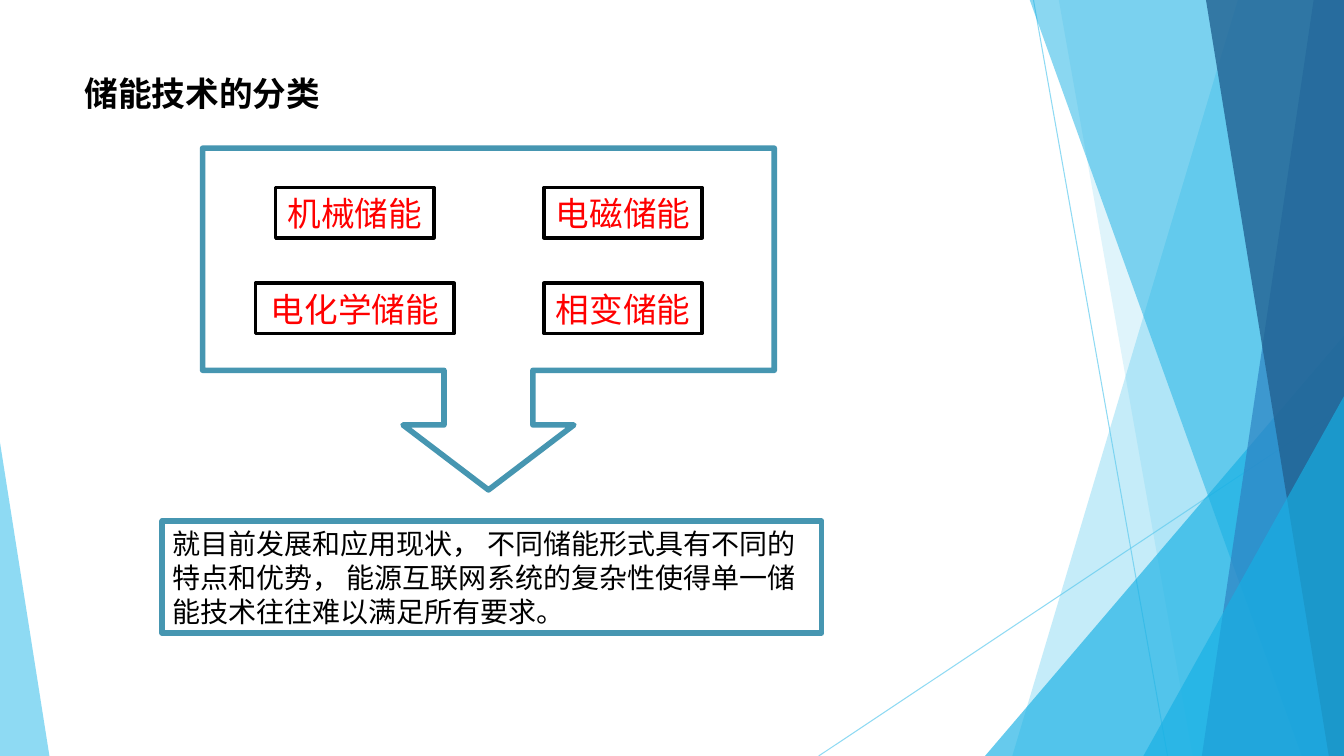
import pptx
import pptx.util
import pptx.dml.color
import pptx.enum.shapes
import pptx.enum.text
import pptx.oxml.ns
import lxml.etree

Inches = pptx.util.Inches
SHAPES = pptx.enum.shapes.MSO_SHAPE
ALIGN = pptx.enum.text.PP_ALIGN
ANCHOR = pptx.enum.text.MSO_ANCHOR

WIDTH, HEIGHT = 13.33, 7.5
FONT = "Noto Sans CJK SC"
COLORS = {"sky": "5FCBEF", "cyan": "17B0E4", "blue": "2E83C3", "navy": "226292",
          "teal": "4696B1", "black": "000000", "red": "FF0000"}

HEADING = "储能技术的分类"
CATEGORIES = [["机械储能", "电磁储能"], ["电化学储能", "相变储能"]]
CONCLUSION = ("就目前发展和应用现状， 不同储能形式具有不同的特点和优势， "
              "能源互联网系统的复杂性使得单一储能技术往往难以满足所有要求。")

RAYS = [((10.25, 0), (11.58, HEIGHT)), ((WIDTH, 4.03), (8.12, HEIGHT))]
FACETS = [
    ("band", 12.28, 10.04, "sky", 36),
    ("band", 10.5, 11.83, "sky", 20),
    ("wedge", (9.77, 3.33, 3.56, 4.17), 1, "cyan", 66),
    ("band", 10.21, 12.91, "cyan", 50),
    ("band", 13.03, 11.92, "blue", 70),
    ("band", 11.96, 13.18, "navy", 80),
    ("wedge", (11.34, 3.93, 1.99, 3.57), 1, "cyan", 66),
    ("wedge", (0, 4.39, 0.49, 3.11), 0, "sky", 70),
]

HEADING_BOX = (0.74, 0.67, 4.09, 0.5)
CONCLUSION_BOX = (1.61, 5.17, 6.54, 1.11)
CALLOUT_BOX = (2.01, 1.47, 5.67, 3.39)
CALLOUT_RATIOS = (0.26, 0.25, 0.19, 0.65)
COLUMN_CENTERS = (3.52, 6.18)
FIRST_ROW, ROW_STEP, LABEL_HEIGHT = 1.86, 0.95, 0.5
LABEL_WIDTHS = {4: 1.57, 5: 1.97}

HEADING_FORMAT = {"size": pptx.util.Pt(24), "bold": True}
LABEL_FORMAT = {"size": pptx.util.Pt(24), "bold": False}
CONCLUSION_FORMAT = {"size": pptx.util.Pt(20), "bold": False}


def rgb(name):
    return pptx.dml.color.RGBColor.from_string(COLORS[name])


def set_alpha(part, percent):
    color = part._element.spPr.find(".//" + pptx.oxml.ns.qn("a:srgbClr"))
    lxml.etree.SubElement(color, pptx.oxml.ns.qn("a:alpha"), val=str(percent * 1000))


def write(part, words, values, color, align):
    frame = part.text_frame
    frame_format = {"word_wrap": True, "vertical_anchor": ANCHOR.MIDDLE,
                    "margin_left": Inches(0.1), "margin_right": Inches(0.1),
                    "margin_top": Inches(0.05), "margin_bottom": Inches(0.05)}
    for key, value in frame_format.items():
        setattr(frame, key, value)
    paragraph = frame.paragraphs[0]
    paragraph.alignment = align
    paragraph.line_spacing = pptx.util.Pt(values["size"].pt * 1.21)
    paragraph.space_before = pptx.util.Pt(0)
    run = paragraph.add_run()
    run.text = words
    for key, value in {**values, "name": FONT}.items():
        setattr(run.font, key, value)
    run.font.color.rgb = rgb(color)
    lxml.etree.SubElement(run.font._element, pptx.oxml.ns.qn("a:ea"), typeface=FONT)


def add_outline(slide, preset, box, color, weight):
    part = slide.shapes.add_shape(preset, *map(Inches, box))
    part.shadow.inherit = False
    part.fill.background()
    part.line.color.rgb = rgb(color)
    part.line.width = pptx.util.Pt(weight)
    return part


def add_rays(slide):
    for start, end in RAYS:
        ray = slide.shapes.add_connector(
            pptx.enum.shapes.MSO_CONNECTOR.STRAIGHT, *map(Inches, start + end))
        ray.line.color.rgb = rgb("sky")
        ray.line.width = pptx.util.Pt(0.75)
        set_alpha(ray, 70)
        lxml.etree.SubElement(ray._element.spPr, pptx.oxml.ns.qn("a:effectLst"))


def add_facets(slide):
    for kind, place, slant, color, alpha in FACETS:
        if kind == "band":
            outline = slide.shapes.build_freeform(Inches(place), Inches(-0.01))
            corners = [(WIDTH, -0.01), (WIDTH, HEIGHT), (slant, HEIGHT)]
            outline.add_line_segments([tuple(map(Inches, c)) for c in corners], close=True)
            facet = outline.convert_to_shape()
        else:
            facet = slide.shapes.add_shape(SHAPES.ISOSCELES_TRIANGLE, *map(Inches, place))
            facet.adjustments[0] = slant
        facet.shadow.inherit = False
        facet.fill.solid()
        facet.fill.fore_color.rgb = rgb(color)
        facet.line.fill.background()
        set_alpha(facet, alpha)


def add_categories(slide):
    callout = add_outline(slide, SHAPES.DOWN_ARROW_CALLOUT, CALLOUT_BOX, "teal", 4)
    for index, ratio in enumerate(CALLOUT_RATIOS):
        callout.adjustments[index] = ratio
    for row, names in enumerate(CATEGORIES):
        for center, name in zip(COLUMN_CENTERS, names):
            width = LABEL_WIDTHS[len(name)]
            box = (center - width / 2, FIRST_ROW + row * ROW_STEP, width, LABEL_HEIGHT)
            label = add_outline(slide, SHAPES.RECTANGLE, box, "black", 2.5)
            write(label, name, LABEL_FORMAT, "red", ALIGN.CENTER)


def main():
    deck = pptx.Presentation()
    deck.slide_width, deck.slide_height = Inches(WIDTH), Inches(HEIGHT)
    slide = deck.slides.add_slide(deck.slide_layouts[5])
    add_rays(slide)
    add_facets(slide)
    heading = slide.shapes.title
    for side, value in zip(("left", "top", "width", "height"), HEADING_BOX):
        setattr(heading, side, Inches(value))
    write(heading, HEADING, HEADING_FORMAT, "black", ALIGN.LEFT)
    conclusion = add_outline(slide, SHAPES.RECTANGLE, CONCLUSION_BOX, "teal", 4)
    write(conclusion, CONCLUSION, CONCLUSION_FORMAT, "black", ALIGN.LEFT)
    add_categories(slide)
    deck.save("out.pptx")


if __name__ == "__main__":
    main()
